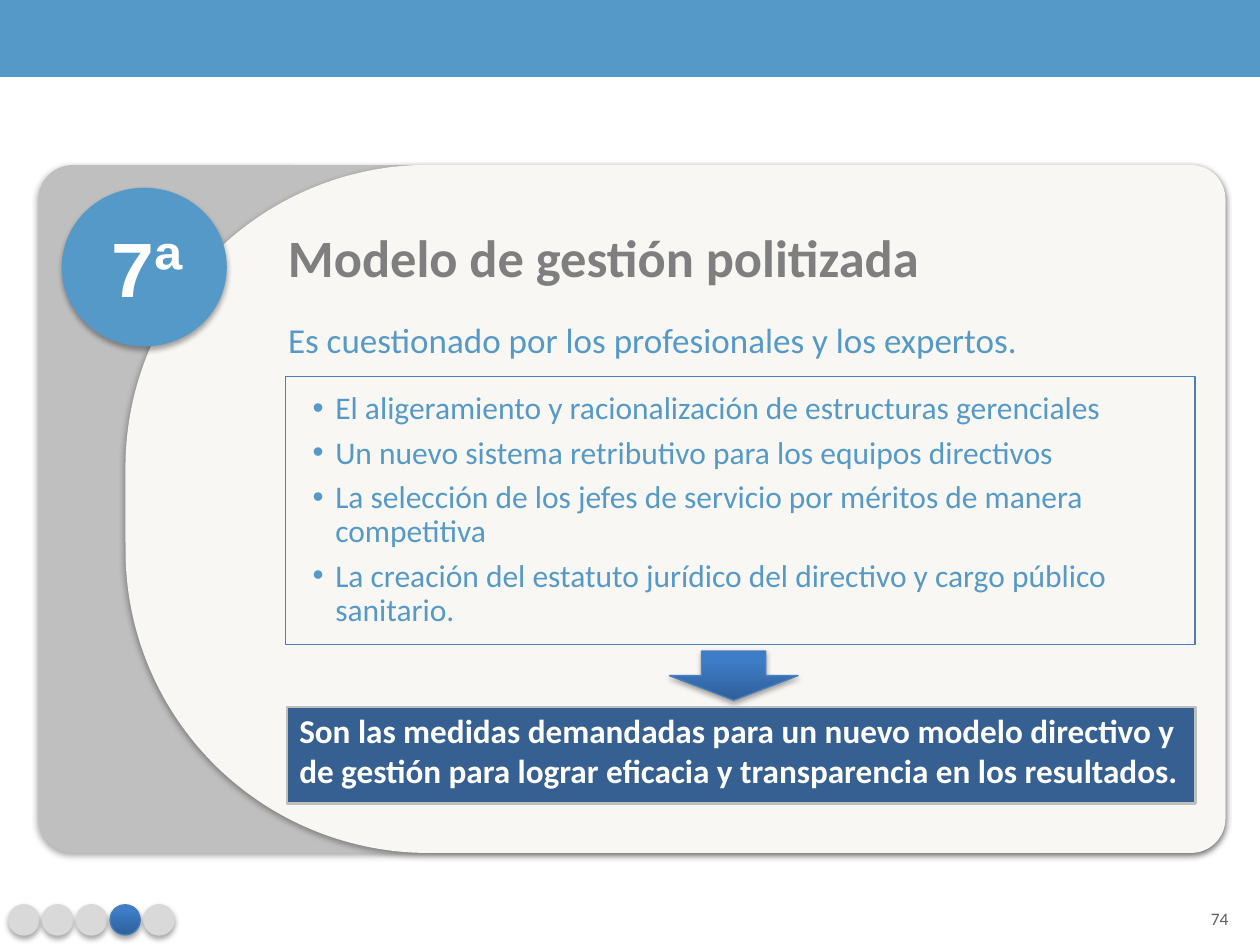
import pptx
import pptx.dml.color
import pptx.enum.shapes
import pptx.enum.text
import pptx.oxml
import pptx.oxml.ns
import pptx.util

Pt = pptx.util.Pt
RGBColor = pptx.dml.color.RGBColor
SHAPE = pptx.enum.shapes.MSO_SHAPE
ALIGN = pptx.enum.text.PP_ALIGN
ANCHOR = pptx.enum.text.MSO_ANCHOR

SKY = RGBColor(0x55, 0x99, 0xC9)
WHITE = RGBColor(0xFF, 0xFF, 0xFF)
CREAM = RGBColor(0xF8, 0xF7, 0xF3)
SILVER = RGBColor(0xBF, 0xBF, 0xBF)
PALE = RGBColor(0xD9, 0xD9, 0xD9)
GRAY = RGBColor(0x7F, 0x7F, 0x7F)
DARK_GRAY = RGBColor(0x5F, 0x5F, 0x5F)
NAVY = RGBColor(0x37, 0x60, 0x92)
OUTLINE = RGBColor(0x4B, 0x7E, 0xBC)
BLUE_GRADIENT = (RGBColor(0x2F, 0x5F, 0x99), RGBColor(0x3D, 0x7C, 0xC7))

SHADOW = (
    '<a:outerShdw %s blurRad="40000" dist="23000" dir="5400000" rotWithShape="0">'
    '<a:srgbClr val="000000"><a:alpha val="35000"/></a:srgbClr></a:outerShdw>'
    % pptx.oxml.ns.nsdecls("a")
)
BULLET = (
    '<a:buClr %s><a:srgbClr val="5599C9"/></a:buClr>' % pptx.oxml.ns.nsdecls("a"),
    '<a:buFont %s typeface="Arial"/>' % pptx.oxml.ns.nsdecls("a"),
    '<a:buChar %s char="•"/>' % pptx.oxml.ns.nsdecls("a"),
)

deck = pptx.Presentation()
deck.slide_width, deck.slide_height = Pt(720), Pt(540)
slide = deck.slides.add_slide(deck.slide_layouts[6])


def add_part(kind, box, fill=None, line=None, line_width=0.75, shadow=False):
    """Add a preset shape; a pair of colours as fill makes a vertical gradient."""
    part = slide.shapes.add_shape(kind, *map(Pt, box))
    if fill is None:
        part.fill.background()
    elif fill is BLUE_GRADIENT:
        part.fill.gradient()
        part.fill.gradient_angle = 90
        for stop, color, position in zip(part.fill.gradient_stops, fill, (0, 0.8)):
            stop.color.rgb = color
            stop.position = position
    else:
        part.fill.solid()
        part.fill.fore_color.rgb = fill
    if line is None:
        part.line.fill.background()
    else:
        part.line.color.rgb = line
        part.line.width = Pt(line_width)
    part.shadow.inherit = False
    if shadow:
        effects = part._element.spPr.find(pptx.oxml.ns.qn("a:effectLst"))
        effects.append(pptx.oxml.parse_xml(SHADOW))
    return part


def write(paragraph, text, color, font, **layout):
    """Fill a paragraph and set its font and layout values."""
    paragraph.text = text
    for target, values in ((paragraph, layout), (paragraph.font, {"name": "Calibri", **font})):
        for key, value in values.items():
            setattr(target, key, value)
    paragraph.font.color.rgb = color


# Top band
add_part(SHAPE.RECTANGLE, (0, 0, 720, 44), SKY)

# Page number
page_number = slide.shapes.add_textbox(Pt(679), Pt(512.6), Pt(36), Pt(24)).text_frame
page_number.vertical_anchor = ANCHOR.MIDDLE
write(page_number.paragraphs[0], "74", DARK_GRAY, {"size": Pt(10)}, alignment=ALIGN.CENTER)

# Progress dots, the fourth one active
for step in range(5):
    active = step == 3
    add_part(SHAPE.OVAL, (5 + 19.3 * step, 517, 17.3, 17.3),
             BLUE_GRADIENT if active else PALE, OUTLINE if active else PALE, shadow=True)

# Gray card and the cream panel turned onto its right side
card = add_part(SHAPE.ROUNDED_RECTANGLE, (22, 94.3, 678.5, 393.2), SILVER, shadow=True)
card.adjustments[0] = 0.05
panel = add_part(SHAPE.ROUND_2_SAME_RECTANGLE, (189.4, -23.5, 393.2, 628.6), CREAM, shadow=True)
panel.rotation = 90
panel.adjustments[0], panel.adjustments[1] = 0.05, 0.44

# Number badge
badge = add_part(SHAPE.OVAL, (35.3, 107.3, 94.3, 90.7), SKY, shadow=True).text_frame
badge.word_wrap = False
badge.margin_left, badge.margin_right = Pt(9), Pt(6)
badge.vertical_anchor = ANCHOR.MIDDLE
write(badge.paragraphs[0], "7ª", WHITE, {"name": "Arial", "size": Pt(44), "bold": True},
      alignment=ALIGN.CENTER)

# Heading
heading = slide.shapes.add_textbox(Pt(156), Pt(120), Pt(460), Pt(53)).text_frame
heading.word_wrap = True
heading.margin_left = heading.margin_top = Pt(8.6)
write(heading.paragraphs[0], "Modelo de gestión politizada", GRAY,
      {"size": Pt(30), "bold": True})

# Introduction and demanded measures
measures = slide.shapes.add_textbox(Pt(156), Pt(176), Pt(533), Pt(194)).text_frame
measures.word_wrap = True
measures.margin_left = measures.margin_right = measures.margin_top = Pt(8.6)
write(measures.paragraphs[0], "Es cuestionado por los profesionales y los expertos.", SKY,
      {"size": Pt(20)}, line_spacing=0.9, space_after=Pt(12))
for measure in (
    "El aligeramiento y racionalización de estructuras gerenciales",
    "Un nuevo sistema retributivo para los equipos directivos",
    "La selección de los jefes de servicio por méritos de manera competitiva",
    "La creación del estatuto jurídico del directivo y cargo público sanitario.",
):
    item = measures.add_paragraph()
    properties = item._p.get_or_add_pPr()
    properties.set("marL", str(Pt(27)))
    properties.set("indent", str(Pt(-13)))
    for xml in BULLET:
        properties.append(pptx.oxml.parse_xml(xml))
    write(item, measure, SKY, {"size": Pt(18)}, line_spacing=0.9, space_before=Pt(6))

# Frame around the measures and arrow to the conclusion
add_part(SHAPE.RECTANGLE, (163, 215, 520, 153.4), line=OUTLINE)
add_part(SHAPE.DOWN_ARROW, (382.5, 372, 73.5, 28.2), BLUE_GRADIENT, OUTLINE, shadow=True)

# Conclusion
conclusion = add_part(SHAPE.RECTANGLE, (164, 404, 519, 55.2), NAVY, SILVER, 1.5).text_frame
conclusion.word_wrap = True
conclusion.vertical_anchor = ANCHOR.TOP
conclusion.margin_left, conclusion.margin_right, conclusion.margin_top = Pt(7), Pt(3), Pt(2)
write(conclusion.paragraphs[0],
      "Son las medidas demandadas para un nuevo modelo directivo y de gestión "
      "para lograr eficacia y transparencia en los resultados.",
      WHITE, {"size": Pt(19), "bold": True}, alignment=ALIGN.LEFT)

deck.save("out.pptx")
